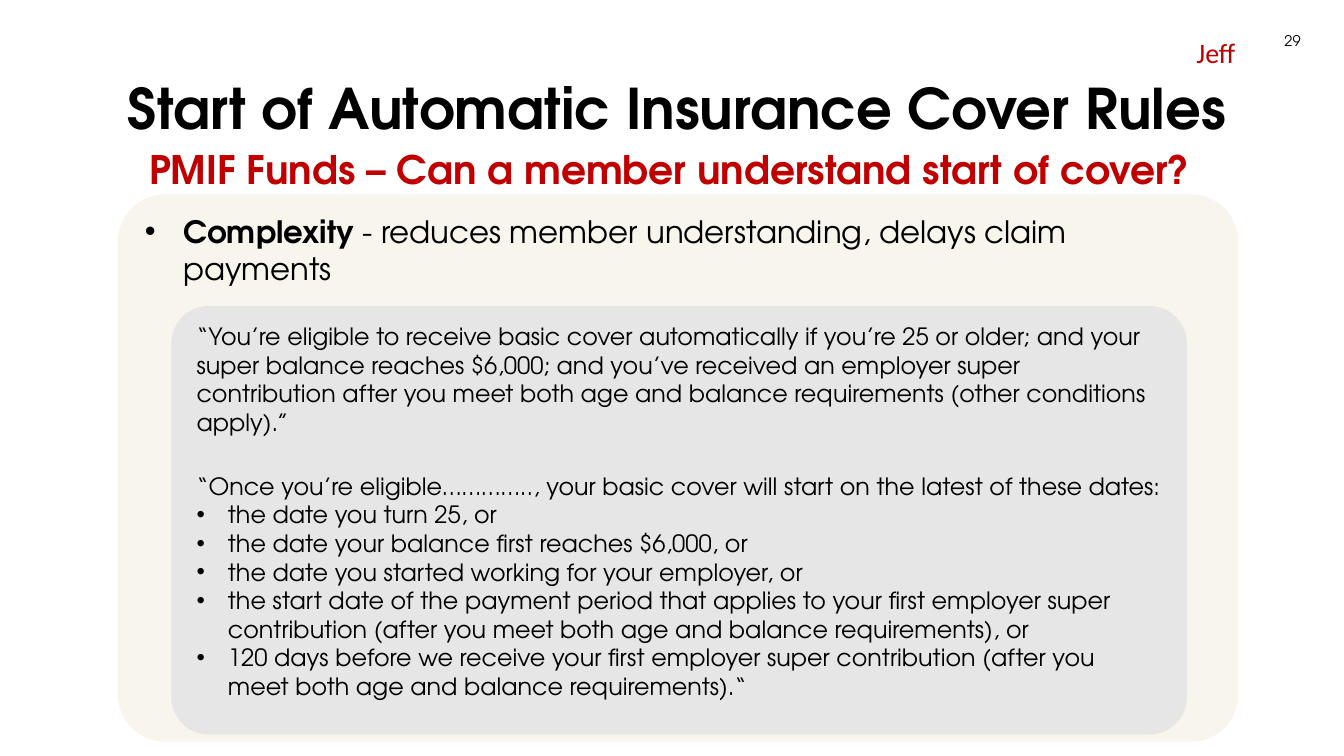
from lxml.etree import SubElement
from pptx import Presentation
from pptx.dml.color import RGBColor
from pptx.enum.shapes import MSO_SHAPE as Shape
from pptx.enum.text import MSO_ANCHOR as Anchor, MSO_AUTO_SIZE as Fit, PP_ALIGN as Align
from pptx.oxml.ns import qn
from pptx.util import Cm, Pt

BLACK = RGBColor(0x00, 0x00, 0x00)
RED = RGBColor(0xC0, 0x00, 0x00)
CREAM = RGBColor(0xF8, 0xF5, 0xEC)
GREY = RGBColor(0xE7, 0xE6, 0xE6)
FONT = "TeX Gyre Adventor"

RULE = (
    "“You’re eligible to receive basic cover automatically if you’re 25 or older; "
    "and your super balance reaches $6,000; and you’ve received an employer super "
    "contribution after you meet both age and balance requirements "
    "(other conditions apply).”"
)
START = (
    "“Once you’re eligible………….., your basic cover will start on the latest "
    "of these dates:"
)
DATES = [
    "the date you turn 25, or",
    "the date your balance first reaches $6,000, or",
    "the date you started working for your employer, or",
    "the start date of the payment period that applies to your first employer super "
    "contribution (after you meet both age and balance requirements), or",
    "120 days before we receive your first employer super contribution "
    "(after you meet both age and balance requirements).“",
]


def place(shape, left, top, width, height):
    shape.left, shape.top = Cm(left), Cm(top)
    shape.width, shape.height = Cm(width), Cm(height)


def set_frame(shape, anchor=Anchor.TOP, side=0.25, edge=0.13):
    """Set wrapping, anchor and margins, and return the text frame."""
    frame = shape.text_frame
    frame.word_wrap = True
    frame.auto_size = Fit.NONE
    frame.vertical_anchor = anchor
    frame.margin_left = frame.margin_right = Cm(side)
    frame.margin_top = frame.margin_bottom = Cm(edge)
    return frame


def add_run(para, text, size, color=BLACK, bold=False, font=FONT):
    run = para.add_run()
    run.text = text
    run.font.name = font
    run.font.size = Pt(size)
    run.font.bold = bold
    run.font.color.rgb = color


def set_para(para, before=0, after=0, line=1.0):
    para.alignment = Align.LEFT
    para.line_spacing = line
    para.space_before, para.space_after = Pt(before), Pt(after)


def add_bullet(para, indent):
    props = para._p.get_or_add_pPr()
    props.set("marL", str(Cm(indent)))
    props.set("indent", str(-Cm(indent)))
    SubElement(props, qn("a:buFont")).set("typeface", "Arial")
    SubElement(props, qn("a:buChar")).set("char", "•")


def add_panel(slide, box, fill=None, bend=0.087):
    """Add a rounded panel without a line; no fill leaves it clear."""
    panel = slide.shapes.add_shape(Shape.ROUNDED_RECTANGLE, *map(Cm, box))
    panel.adjustments[0] = bend
    panel.shadow.inherit = False
    panel.line.fill.background()
    if fill is None:
        panel.fill.background()
    else:
        panel.fill.solid()
        panel.fill.fore_color.rgb = fill
    return panel


def add_label(slide, text, box, **style):
    label = slide.shapes.add_textbox(*map(Cm, box))
    para = set_frame(label).paragraphs[0]
    set_para(para)
    add_run(para, text, **style)


def fill_title(title):
    place(title, 2.97, 1.73, 29.21, 2.18)
    para = set_frame(title, Anchor.MIDDLE).paragraphs[0]
    set_para(para, 6, 6, 0.85)
    add_run(para, "Start of Automatic Insurance Cover Rules", 40, bold=True)


def fill_body(body):
    place(body, 3.65, 5.35, 26.84, 2.2)
    para = set_frame(body, side=0, edge=0).paragraphs[0]
    set_para(para, 6, 6)
    add_bullet(para, 0.97)
    add_run(para, "Complexity", 22, bold=True)
    add_run(para, " - reduces member understanding, delays claim payments", 22)


def fill_topic(panel):
    para = set_frame(panel, Anchor.MIDDLE).paragraphs[0]
    set_para(para)
    add_run(para, "PMIF Funds – Can a member understand start of cover?", 28, RED, True)


def fill_quote(panel):
    frame = set_frame(panel, side=0.36)
    rule = frame.paragraphs[0]
    set_para(rule, 6, 25.2)
    add_run(rule, RULE, 17)
    for text in [START] + DATES:
        para = frame.add_paragraph()
        set_para(para)
        if text in DATES:
            add_bullet(para, 0.79)
        add_run(para, text, 17)


def main():
    deck = Presentation()
    deck.slide_width, deck.slide_height = Cm(33.87), Cm(19.05)
    slide = deck.slides.add_slide(deck.slide_layouts[1])
    title, body = slide.placeholders

    panel = add_panel(slide, (2.97, 4.9, 28.24, 13.79), CREAM)
    topic = add_panel(slide, (3.35, 3.25, 29.62, 2.03), bend=0.264)
    for shape in (panel, topic):
        title.element.addprevious(shape.element)
    fill_topic(topic)
    fill_title(title)
    fill_body(body)
    add_label(slide, "Jeff", (29.9, 0.77, 2.2, 1.12), size=20, color=RED, font="Calibri")
    add_label(slide, "29", (32.12, 0.68, 1.17, 0.51), size=10.5)
    fill_quote(add_panel(slide, (4.32, 7.71, 25.59, 10.8), GREY))
    deck.save("out.pptx")


if __name__ == "__main__":
    main()
